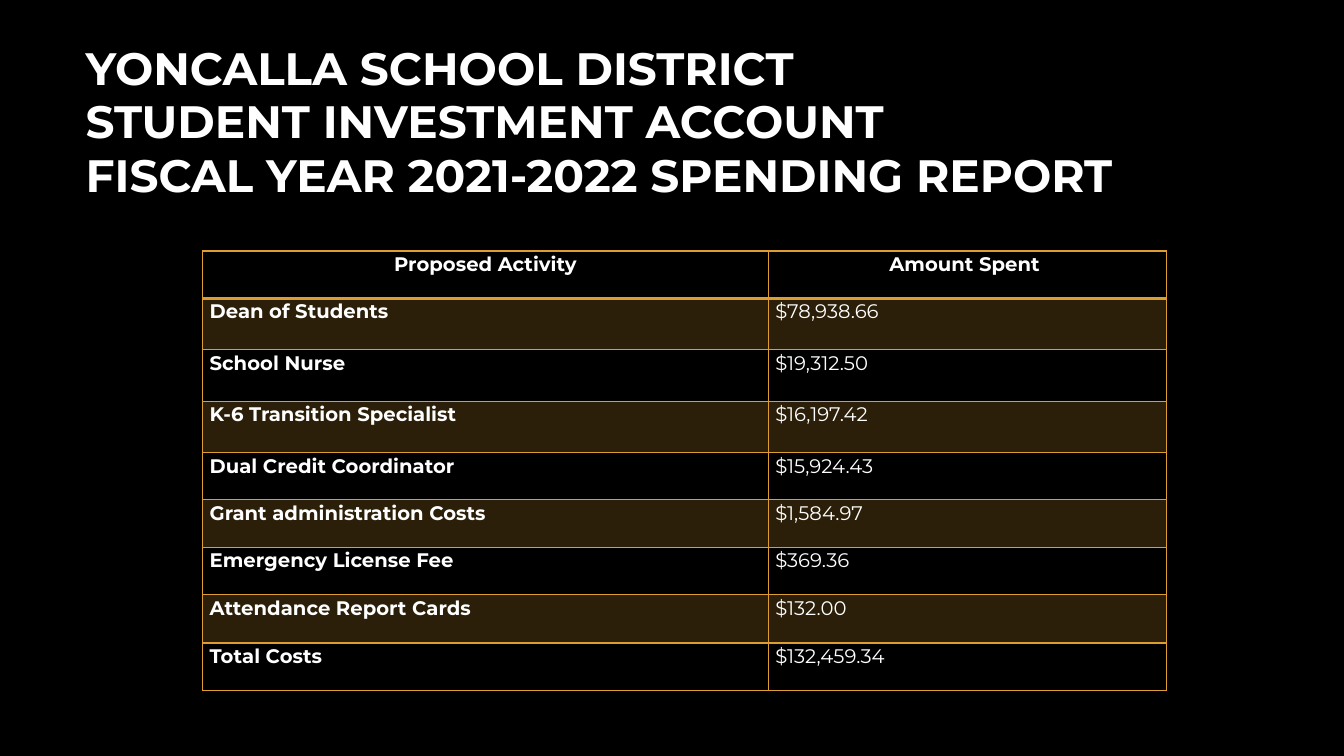
from dataclasses import dataclass

from lxml import etree
from pptx import Presentation
from pptx import util as u
from pptx.dml.color import RGBColor
from pptx.enum import text
from pptx.oxml.ns import qn


@dataclass
class Theme:
    font: str = "Montserrat"
    back: str = "000000"
    ink: str = "FFFFFF"
    gold: str = "DD9D31"
    tint: int = 20
    head: float = 32.4
    body: float = 14


class Deck:
    def __init__(self, theme):
        self.theme = theme
        self.prs = Presentation()
        self.prs.slide_width = u.Inches(13.33)
        self.prs.slide_height = u.Inches(7.5)
        self.slide = self.prs.slides.add_slide(self.prs.slide_layouts[5])
        fill = self.slide.background.fill
        fill.solid()
        fill.fore_color.rgb = RGBColor.from_string(theme.back)

    def apply(self, item, **vals):
        for key, val in vals.items():
            setattr(item, key, val)

    def style(self, par, size, bold, align, gap):
        self.apply(par, alignment=align, line_spacing=gap)
        for run in par.runs:
            self.apply(run.font, name=self.theme.font, size=u.Pt(size), bold=bold)
            run.font.color.rgb = RGBColor.from_string(self.theme.ink)

    def title(self, lines, left, top, width, height):
        box = self.slide.shapes.title
        self.apply(box, left=u.Inches(left), top=u.Inches(top),
                   width=u.Inches(width), height=u.Inches(height))
        frame = box.text_frame
        self.apply(frame, text="\v".join(lines), word_wrap=True,
                   auto_size=text.MSO_AUTO_SIZE.NONE,
                   vertical_anchor=text.MSO_ANCHOR.MIDDLE,
                   margin_top=0, margin_bottom=u.Inches(0.49))
        self.style(frame.paragraphs[0], self.theme.head, True,
                   text.PP_ALIGN.LEFT, 0.98)

    def border(self, cell, sides):
        props = cell._tc.get_or_add_tcPr()
        for side, width in sides.items():
            line = etree.SubElement(props, qn("a:ln" + side), w=str(u.Pt(width)))
            solid = etree.SubElement(line, qn("a:solidFill"))
            etree.SubElement(solid, qn("a:srgbClr"), val=self.theme.gold)

    def shade(self, cell, band):
        if not band:
            cell.fill.background()
            return
        cell.fill.solid()
        cell.fill.fore_color.rgb = RGBColor.from_string(self.theme.gold)
        color = cell._tc.tcPr.find(qn("a:solidFill")).find(qn("a:srgbClr"))
        etree.SubElement(color, qn("a:alpha"), val=str(self.theme.tint * 1000))

    def table(self, data, left, top, cols, rows):
        frame = self.slide.shapes.add_table(
            len(rows), len(cols), u.Inches(left), u.Inches(top),
            u.Inches(sum(cols)), u.Inches(sum(rows)))
        grid = frame.table
        grid.horz_banding = False
        for col, width in zip(grid.columns, cols):
            col.width = u.Inches(width)
        for row, height in zip(grid.rows, rows):
            row.height = u.Inches(height)
        for r, words in enumerate(data):
            for c, word in enumerate(words):
                cell = grid.cell(r, c)
                self.apply(cell, text=word, vertical_anchor=text.MSO_ANCHOR.TOP,
                           margin_left=u.Inches(0.07), margin_right=u.Inches(0.07),
                           margin_top=0, margin_bottom=0)
                align = text.PP_ALIGN.LEFT if r else text.PP_ALIGN.CENTER
                self.style(cell.text_frame.paragraphs[0], self.theme.body,
                           r == 0 or c == 0, align, 1.07)
                self.border(cell, {"L": 1, "R": 1, "T": 2 if r == 1 else 1,
                                   "B": 2 if r == 0 else 1})
                self.shade(cell, r % 2 == 1)


def main():
    deck = Deck(Theme())
    deck.title(["YONCALLA SCHOOL DISTRICT", "STUDENT INVESTMENT ACCOUNT",
                "FISCAL YEAR 2021-2022 SPENDING REPORT"], 0.75, 0.67, 11.08, 1.59)
    costs = [
        ("Proposed Activity", "Amount Spent "),
        ("Dean of Students", "$78,938.66"),
        ("School Nurse", "$19,312.50"),
        ("K-6 Transition Specialist", "$16,197.42"),
        ("Dual Credit Coordinator", "$15,924.43"),
        ("Grant administration Costs", "$1,584.97"),
        ("Emergency License Fee", "$369.36"),
        ("Attendance Report Cards", "$132.00"),
        ("Total Costs", "$132,459.34"),
    ]
    deck.table(costs, 2.01, 2.49, [5.61, 3.95],
               [0.47] + [0.51] * 3 + [0.47] * 3 + [0.48, 0.47])
    deck.prs.save("out.pptx")


if __name__ == "__main__":
    main()
